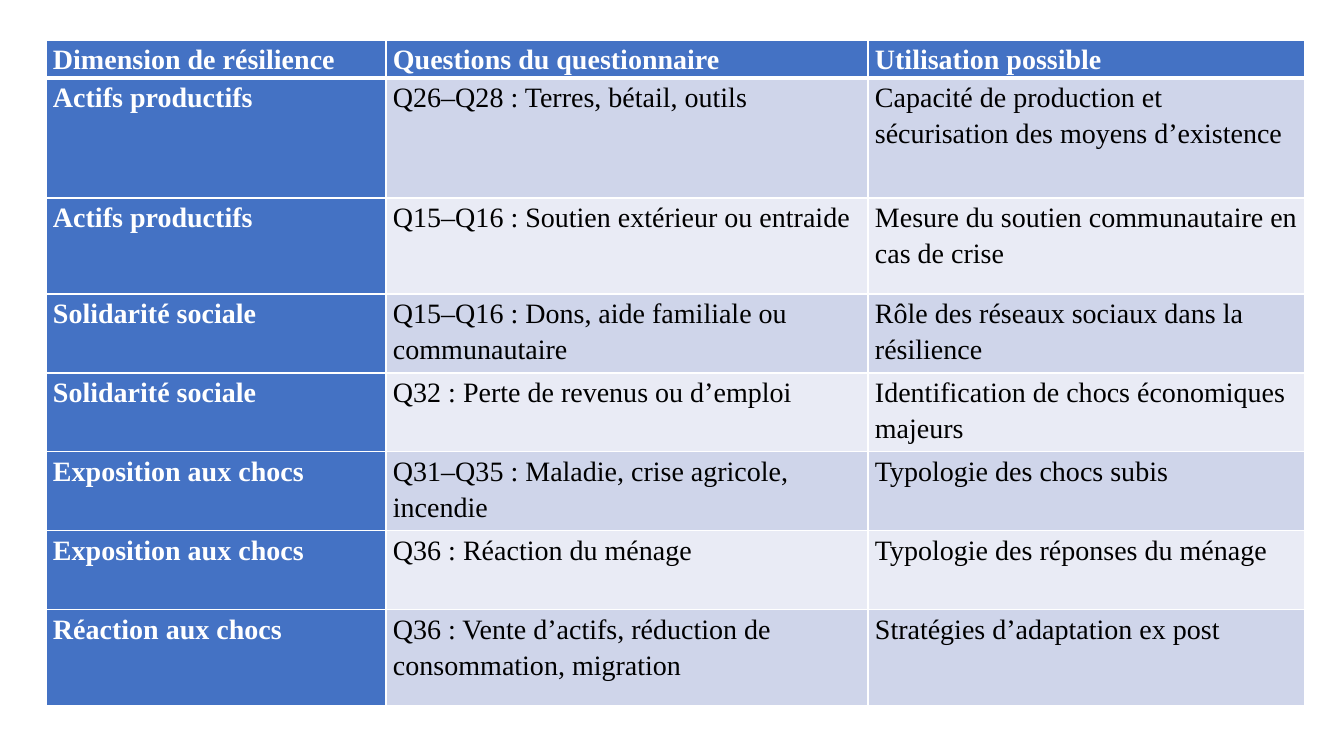
import dataclasses

import lxml.etree
import pptx
import pptx.dml.color
import pptx.oxml.ns
import pptx.util

EMU_PER_PX = 914400 / 100.8
FONT = "Times New Roman"
WHITE = "FFFFFF"
BLACK = "000000"
BLUE = "4472C4"
BANDS = ("CFD5EA", "E9EBF5")
COLUMN_WIDTHS = (340, 482, 437)
THIN, THICK = 1, 3


@dataclasses.dataclass(frozen=True)
class ResilienceRow:
    height: int
    dimension: str
    questions: str
    use: str


ROWS = (
    ResilienceRow(38, "Dimension de résilience", "Questions du questionnaire",
                  "Utilisation possible"),
    ResilienceRow(120, "Actifs productifs", "Q26–Q28 : Terres, bétail, outils",
                  "Capacité de production et sécurisation des moyens d’existence"),
    ResilienceRow(96, "Actifs productifs", "Q15–Q16 : Soutien extérieur ou entraide",
                  "Mesure du soutien communautaire en cas de crise"),
    ResilienceRow(79, "Solidarité sociale", "Q15–Q16 : Dons, aide familiale ou communautaire",
                  "Rôle des réseaux sociaux dans la résilience"),
    ResilienceRow(79, "Solidarité sociale", "Q32 : Perte de revenus ou d’emploi",
                  "Identification de chocs économiques majeurs"),
    ResilienceRow(79, "Exposition aux chocs", "Q31–Q35 : Maladie, crise agricole, incendie",
                  "Typologie des chocs subis"),
    ResilienceRow(79, "Exposition aux chocs", "Q36 : Réaction du ménage",
                  "Typologie des réponses du ménage"),
    ResilienceRow(96, "Réaction aux chocs",
                  "Q36 : Vente d’actifs, réduction de consommation, migration",
                  "Stratégies d’adaptation ex post"),
)


def px(length: int) -> pptx.util.Emu:
    return pptx.util.Emu(round(length * EMU_PER_PX))


def colour(value: str) -> pptx.dml.color.RGBColor:
    return pptx.dml.color.RGBColor.from_string(value)


def add_borders(cell, top: int, bottom: int) -> None:
    qn = pptx.oxml.ns.qn
    properties = cell._tc.get_or_add_tcPr()
    for side, width in (("L", THIN), ("R", THIN), ("T", top), ("B", bottom)):
        border = lxml.etree.SubElement(
            properties, qn(f"a:ln{side}"), w=str(pptx.util.Pt(width)))
        fill = lxml.etree.SubElement(border, qn("a:solidFill"))
        lxml.etree.SubElement(fill, qn("a:srgbClr"), val=WHITE)


def write_cell(cell, text: str, fill: str, ink: str, bold: bool) -> None:
    cell.margin_left = cell.margin_right = px(7)
    cell.margin_top = cell.margin_bottom = 0
    cell.fill.solid()
    cell.fill.fore_color.rgb = colour(fill)
    paragraph = cell.text_frame.paragraphs[0]
    paragraph.text = text
    paragraph.line_spacing = 1.15
    paragraph.space_after = pptx.util.Pt(10)
    font = paragraph.runs[0].font
    font.name = FONT
    font.size = pptx.util.Pt(20)
    font.bold = bold
    font.color.rgb = colour(ink)


def add_resilience_table(slide) -> None:
    table = slide.shapes.add_table(
        len(ROWS), len(COLUMN_WIDTHS), px(46), px(40),
        px(sum(COLUMN_WIDTHS)), px(sum(row.height for row in ROWS))).table
    for column, width in zip(table.columns, COLUMN_WIDTHS):
        column.width = px(width)
    for row_index, row in enumerate(ROWS):
        table.rows[row_index].height = px(row.height)
        top = THICK if row_index == 1 else THIN
        bottom = THICK if row_index == 0 else THIN
        for column_index, text in enumerate((row.dimension, row.questions, row.use)):
            heading = row_index == 0 or column_index == 0
            fill = BLUE if heading else BANDS[(row_index - 1) % 2]
            cell = table.cell(row_index, column_index)
            add_borders(cell, top, bottom)
            write_cell(cell, text, fill, WHITE if heading else BLACK, heading)


def main() -> None:
    presentation = pptx.Presentation()
    presentation.slide_width = px(1344)
    presentation.slide_height = px(756)
    slide = presentation.slides.add_slide(presentation.slide_layouts[6])
    add_resilience_table(slide)
    presentation.save("out.pptx")


if __name__ == "__main__":
    main()
